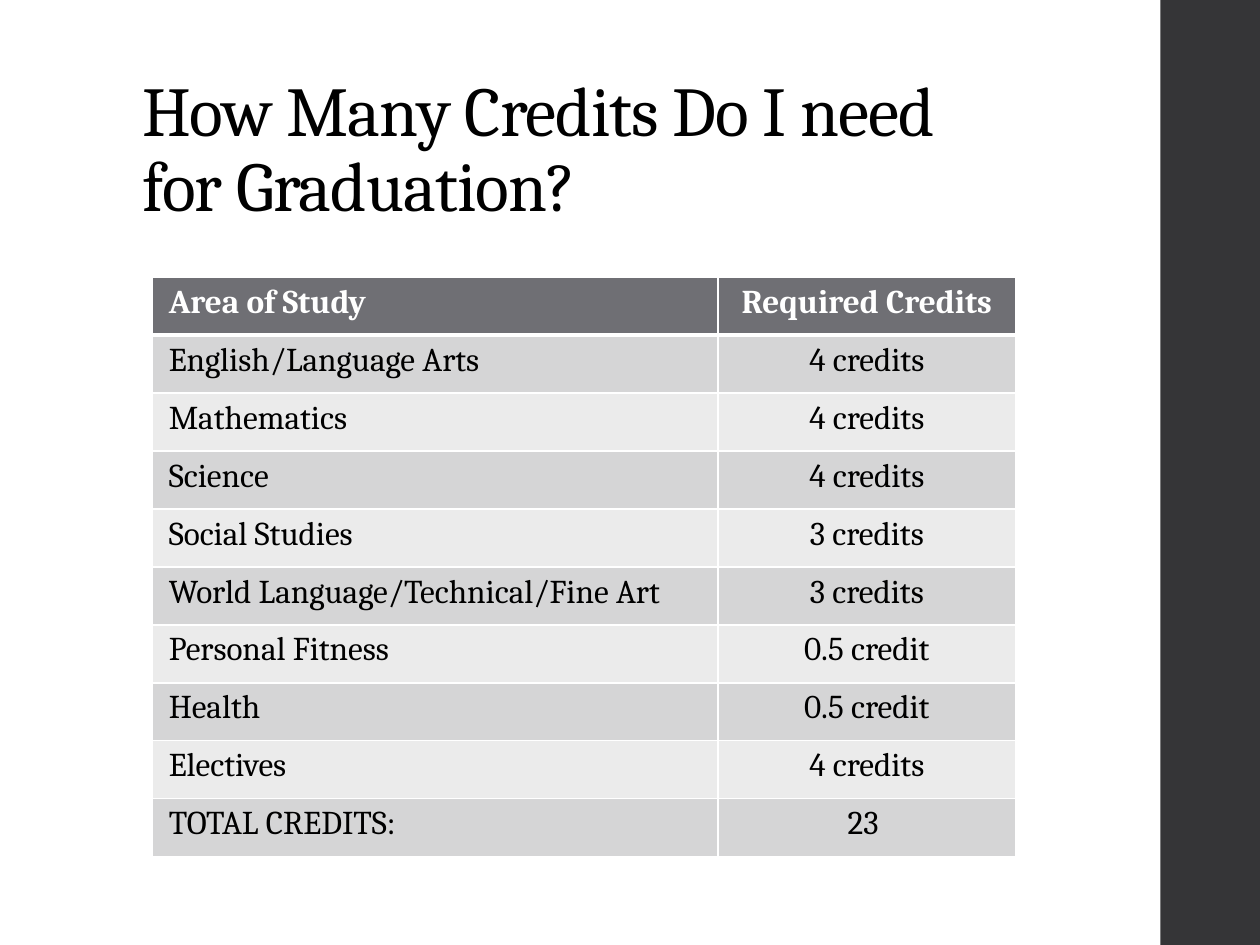
from lxml import etree
from pptx import Presentation
from pptx.dml.color import RGBColor
from pptx.enum import shapes, text
from pptx.oxml import ns
from pptx.util import Inches, Pt

FONT = "Cambria"
COLORS = {
    "text": "000000",
    "white": "FFFFFF",
    "bar": "353537",
    "header": "6F6F74",
    "odd": "D5D5D6",
    "even": "EBEBEB",
}
TITLE_LINES = ["How Many Credits Do I need ", "for Graduation?"]
CREDITS = [
    ("Area of Study", "Required Credits"),
    ("English/Language Arts", "4 credits"),
    ("Mathematics", "4 credits"),
    ("Science", "4 credits"),
    ("Social Studies", "3 credits"),
    ("World Language/Technical/Fine Art", "3 credits"),
    ("Personal Fitness", "0.5 credit"),
    ("Health", "0.5 credit"),
    ("Electives", "4 credits"),
    ("TOTAL CREDITS:", "23 "),
]
COLUMN_WIDTHS = [4.49, 2.36]
ROW_HEIGHT = 0.46


def rgb(name):
    return RGBColor.from_string(COLORS[name])


def add_run(p, content, size, color, bold=False):
    r = p.add_run()
    r.text = content
    r.font.name = FONT
    r.font.size = Pt(size)
    r.font.bold = bold
    r.font.color.rgb = rgb(color)
    return r


def add_side_bar(s):
    bar = s.shapes.add_shape(shapes.MSO_SHAPE.RECTANGLE, Inches(9.21), 0,
                             Inches(0.79), Inches(7.5))
    bar.shadow.inherit = False
    bar.fill.solid()
    bar.fill.fore_color.rgb = rgb("bar")
    bar.line.fill.background()


def add_title(s):
    sp = s.shapes.add_textbox(Inches(1.03), Inches(0.4), Inches(7.95), Inches(1.45))
    tf = sp.text_frame
    tf.word_wrap = True
    tf.vertical_anchor = text.MSO_ANCHOR.BOTTOM
    p = tf.paragraphs[0]
    p.line_spacing = 0.9
    for i, line in enumerate(TITLE_LINES):
        if i:
            p.add_line_break()
        r = add_run(p, line, 40, "text")
        r.font._element.set("spc", "-50")


def set_borders(cell, bottom):
    """Draw white cell borders, 1 pt except for the bottom one."""
    tc_pr = cell._tc.get_or_add_tcPr()
    for i, side in enumerate("LRTB"):
        width = bottom if side == "B" else 1
        ln = etree.Element(ns.qn(f"a:ln{side}"), w=str(Pt(width)))
        fill = etree.SubElement(ln, ns.qn("a:solidFill"))
        etree.SubElement(fill, ns.qn("a:srgbClr"), val=COLORS["white"])
        tc_pr.insert(i, ln)


def fill_cell(cell, content, row, col):
    is_header = row == 0
    cell.margin_left = cell.margin_right = Inches(0.13)
    cell.margin_top = cell.margin_bottom = Inches(0.05)
    cell.fill.solid()
    cell.fill.fore_color.rgb = rgb("header" if is_header else "odd" if row % 2 else "even")
    # The first two rows share the heavy line under the header.
    set_borders(cell, bottom=3 if is_header else 1)
    p = cell.text_frame.paragraphs[0]
    p.alignment = text.PP_ALIGN.CENTER if col else text.PP_ALIGN.LEFT
    add_run(p, content, 19, "white" if is_header else "text", is_header)


def add_credit_table(s):
    frame = s.shapes.add_table(len(CREDITS), len(COLUMN_WIDTHS), Inches(1.21), Inches(2.2),
                               Inches(sum(COLUMN_WIDTHS)), Inches(ROW_HEIGHT * len(CREDITS)))
    table = frame.table
    for column, width in zip(table.columns, COLUMN_WIDTHS):
        column.width = Inches(width)
    for i, values in enumerate(CREDITS):
        table.rows[i].height = Inches(ROW_HEIGHT)
        for j, value in enumerate(values):
            fill_cell(table.cell(i, j), value, i, j)
            if i == 1:
                top = table.cell(i, j)._tc.tcPr.find(ns.qn("a:lnT"))
                top.set("w", str(Pt(3)))


def main():
    prs = Presentation()
    prs.slide_width, prs.slide_height = Inches(10), Inches(7.5)
    s = prs.slides.add_slide(prs.slide_layouts[6])
    add_side_bar(s)
    add_title(s)
    add_credit_table(s)
    prs.save("out.pptx")


if __name__ == "__main__":
    main()
